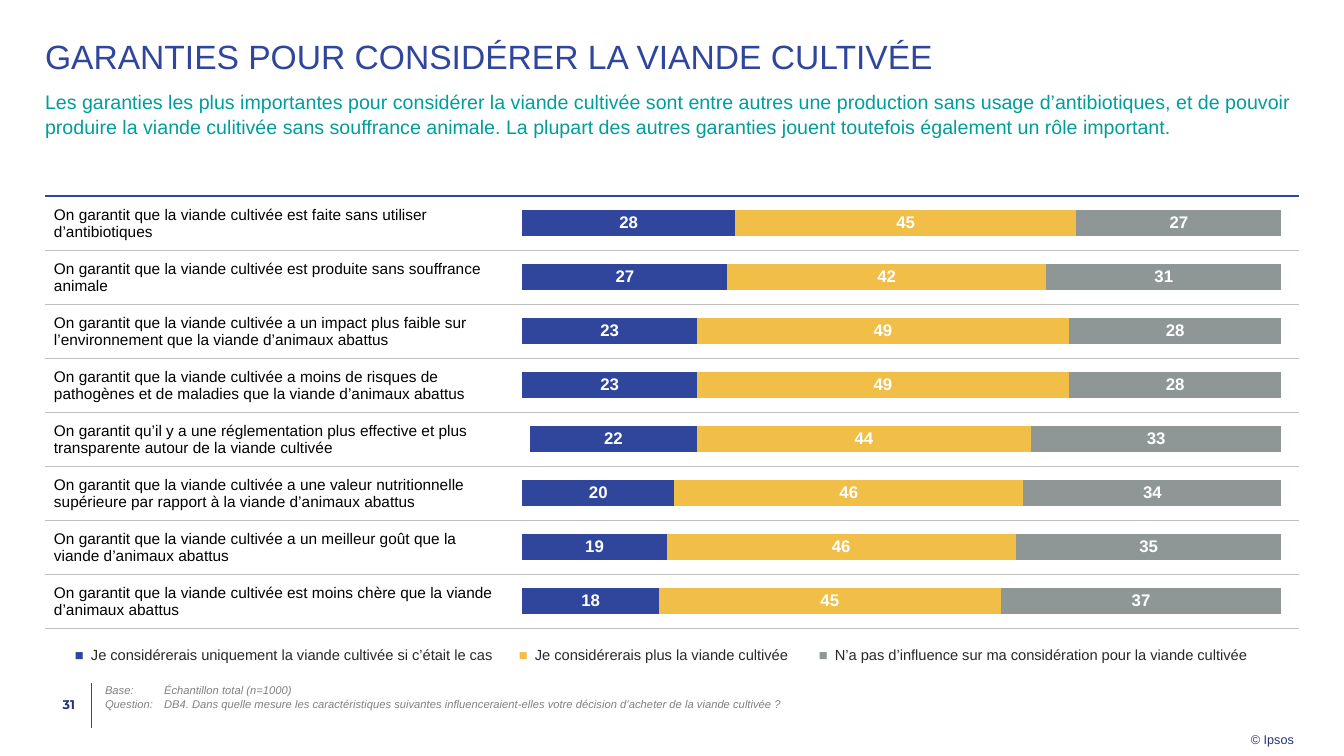
from lxml import etree
from pptx import Presentation
from pptx import util as u
from pptx.chart.data import CategoryChartData
from pptx.dml.color import RGBColor
from pptx.enum import chart as ch, shapes, text
from pptx.oxml import parse_xml
from pptx.oxml.ns import nsdecls, qn

SCALE = 914400 / 100.8
BLUE, GOLD, GREY = "2F469C", "F1BE48", "8E9696"
NAVY, TEAL, DARK, RULE = "233475", "009D9C", "282828", "BFBFBF"
LEFT, TOP, WIDTH, ROW = 45, 196, 1254, 54

# Statement, then shares: only if so, more likely, no influence
ROWS = [
    ("On garantit que la viande cultivée est faite sans utiliser d’antibiotiques", 28, 45, 27),
    ("On garantit que la viande cultivée est produite sans souffrance animale", 27, 42, 31),
    ("On garantit que la viande cultivée a un impact plus faible sur l’environnement "
     "que la viande d’animaux abattus", 23, 49, 28),
    ("On garantit que la viande cultivée a moins de risques de pathogènes et de maladies "
     "que la viande d’animaux abattus", 23, 49, 28),
    ("On garantit qu’il y a une réglementation plus effective et plus transparente "
     "autour de la viande cultivée", 22, 44, 33),
    ("On garantit que la viande cultivée a une valeur nutritionnelle supérieure "
     "par rapport à la viande d’animaux abattus", 20, 46, 34),
    ("On garantit que la viande cultivée a un meilleur goût que la viande d’animaux abattus",
     19, 46, 35),
    ("On garantit que la viande cultivée est moins chère que la viande d’animaux abattus",
     18, 45, 37),
]
KEYS = [
    ("Je considérerais uniquement la viande cultivée si c’était le cas", BLUE, 444),
    ("Je considérerais plus la viande cultivée", GOLD, 300),
    ("N’a pas d’influence sur ma considération pour la viande cultivée", GREY, 511),
]


def px(n):
    return round(n * SCALE)


def rgb(code):
    return RGBColor.from_string(code)


def style(font, size, color, name="Arial", bold=False, italic=False):
    font.size, font.name = u.Pt(size), name
    font.bold, font.italic = bold, italic
    font.color.rgb = rgb(color)


def hang(para, gap):
    """Hanging indent with a tab stop at its edge."""
    props = para._p.get_or_add_pPr()
    props.set("marL", str(px(gap)))
    props.set("indent", str(-px(gap)))
    tabs = etree.SubElement(props, qn("a:tabLst"))
    etree.SubElement(tabs, qn("a:tab"), pos=str(px(gap)), algn="l")


def inset(box, left, top, right, low):
    box.margin_left, box.margin_top = px(left), px(top)
    box.margin_right, box.margin_bottom = px(right), px(low)


def label(slide, area, words, size, color, pad=(0, 0, 0, 0), space=1.0, gap=0,
          wrap=True, **look):
    frame = slide.shapes.add_textbox(*map(px, area)).text_frame
    frame.word_wrap = wrap
    inset(frame, *pad)
    frame.text = words
    for para in frame.paragraphs:
        para.line_spacing = space
        if gap:
            hang(para, gap)
        for run in para.runs:
            style(run.font, size, color, **look)
    return frame


def border(cell, top=None, low=None):
    """Each edge is (colour, points) or None."""
    props = cell._tc.get_or_add_tcPr()
    edges = {"lnL": None, "lnR": None, "lnT": top, "lnB": low}
    for spot, (tag, edge) in enumerate(edges.items()):
        line = etree.Element(qn("a:" + tag))
        if edge:
            line.set("w", str(u.Pt(edge[1])))
            fill = etree.SubElement(line, qn("a:solidFill"))
            etree.SubElement(fill, qn("a:srgbClr"), val=edge[0])
        else:
            line.set("w", "0")
            etree.SubElement(line, qn("a:noFill"))
        props.insert(spot, line)


def grid(slide, left, top, cols, rows, high):
    area = map(px, (left, top, sum(cols), rows * high))
    table = slide.shapes.add_table(rows, len(cols), *area).table
    table.first_row = table.horz_banding = False
    for col, wide in zip(table.columns, cols):
        col.width = px(wide)
    for cell in table.iter_cells():
        cell.fill.background()
        cell.vertical_anchor = text.MSO_ANCHOR.MIDDLE
    return table


def items(slide):
    table = grid(slide, LEFT, TOP, (461, 793), len(ROWS), ROW)
    for i, row in enumerate(ROWS):
        for cell in table.rows[i].cells:
            border(cell, (RULE, 0.25) if i else (BLUE, 1), (RULE, 0.25))
        cell = table.cell(i, 0)
        inset(cell, 9, 1, 1, 0)
        cell.text_frame.text = row[0]
        style(cell.text_frame.paragraphs[0].runs[0].font, 11, "000000")


def legend(slide):
    table = grid(slide, 71, 645, [key[2] for key in KEYS], 1, 21)
    for cell, (words, color, _) in zip(table.iter_cells(), KEYS):
        border(cell)
        inset(cell, 4, 0, 4, 0)
        para = cell.text_frame.paragraphs[0]
        para.text = "■"
        hang(para, 16)
        para.add_run().text = "\t" + words
        for run, tint in zip(para.runs, (color, DARK)):
            style(run.font, 10.5, tint)


def bars(slide):
    data = CategoryChartData()
    data.categories = [str(i + 1) for i in range(len(ROWS))]
    for i in range(3):
        data.add_series(f"Series {i + 1}", [row[3 - i] for row in ROWS])
    area = map(px, (505, TOP, 794, ROW * len(ROWS)))
    chart = slide.shapes.add_chart(ch.XL_CHART_TYPE.BAR_STACKED, *area, data).chart
    chart.has_legend = chart.has_title = False
    style(chart.font, 10, DARK)
    plot = chart.plots[0]
    plot.gap_width, plot.overlap, plot.vary_by_categories = 110, 100, False

    # Bare axes, both reversed
    for axis in (chart.category_axis, chart.value_axis):
        axis.reverse_order = True
        axis.has_major_gridlines = False
        axis.major_tick_mark = axis.minor_tick_mark = ch.XL_TICK_MARK.NONE
        axis.tick_label_position = ch.XL_TICK_LABEL_POSITION.NONE
        axis.format.line.fill.background()
    chart.value_axis.minimum_scale, chart.value_axis.maximum_scale = 0, 100

    # Bar colours and values
    for series, color in zip(plot.series, (GREY, GOLD, BLUE)):
        series.format.fill.solid()
        series.format.fill.fore_color.rgb = rgb(color)
        tags = series.data_labels
        tags.show_value = True
        tags.number_format, tags.number_format_is_linked = "0;0;", False
        tags.position = ch.XL_LABEL_POSITION.CENTER
        style(tags.font, 12, "FFFFFF", bold=True)

    # Plot fills the full height
    zone = chart._chartSpace.chart.plotArea
    for old in zone.findall(qn("c:layout")):
        zone.remove(old)
    spots = {"x": 0.022, "y": 0, "w": 0.956, "h": 1}
    modes = "".join(f'<c:{k}Mode val="edge"/>' for k in "xy")
    sizes = "".join(f'<c:{k} val="{v}"/>' for k, v in spots.items())
    zone.insert(0, parse_xml(
        f'<c:layout {nsdecls("c")}><c:manualLayout><c:layoutTarget val="inner"/>'
        f'{modes}{sizes}</c:manualLayout></c:layout>'))


def rule(slide, x, top, low):
    line = slide.shapes.add_connector(
        shapes.MSO_CONNECTOR.STRAIGHT, *map(px, (x, top, x, low)))
    line.line.color.rgb = rgb(BLUE)
    line.line.width = u.Pt(0.5)
    etree.SubElement(line._element.spPr, qn("a:effectLst"))


def main():
    deck = Presentation()
    deck.slide_width, deck.slide_height = px(1344), px(756)
    slide = deck.slides.add_slide(deck.slide_layouts[6])

    # Heading
    label(slide, (LEFT, 40, WIDTH, 42), "GARANTIES POUR CONSIDÉRER LA VIANDE CULTIVÉE",
          24, BLUE, space=0.9)
    label(slide, (LEFT, 85, WIDTH, 80),
          "Les garanties les plus importantes pour considérer la viande cultivée sont entre "
          "autres une production sans usage d’antibiotiques, et de pouvoir produire la viande "
          "culitivée sans souffrance animale. La plupart des autres garanties jouent toutefois "
          "également un rôle important.", 14, TEAL, pad=(0, 4, 0, 0), space=1.05)

    # Results
    items(slide)
    bars(slide)
    legend(slide)

    # Footer
    rule(slide, 91, 683, 728)
    label(slide, (105, 683, 1111, 40),
          "Base:\tÉchantillon total (n=1000)\n"
          "Question:\tDB4. Dans quelle mesure les caractéristiques suivantes "
          "influenceraient-elles votre décision d’acheter de la viande cultivée ?",
          8, "808080", space=1.05, gap=59, italic=True)
    page = label(slide, (LEFT, 683, 45, 43), "31", 9, NAVY, pad=(0, 0, 15, 0),
                 name="Montserrat", bold=True)
    page.vertical_anchor = text.MSO_ANCHOR.MIDDLE
    page.paragraphs[0].alignment = text.PP_ALIGN.RIGHT
    label(slide, (1251, 728, 43, 19), "© Ipsos", 9, NAVY, pad=(0, 4, 0, 0), wrap=False)

    deck.save("out.pptx")


if __name__ == "__main__":
    main()
